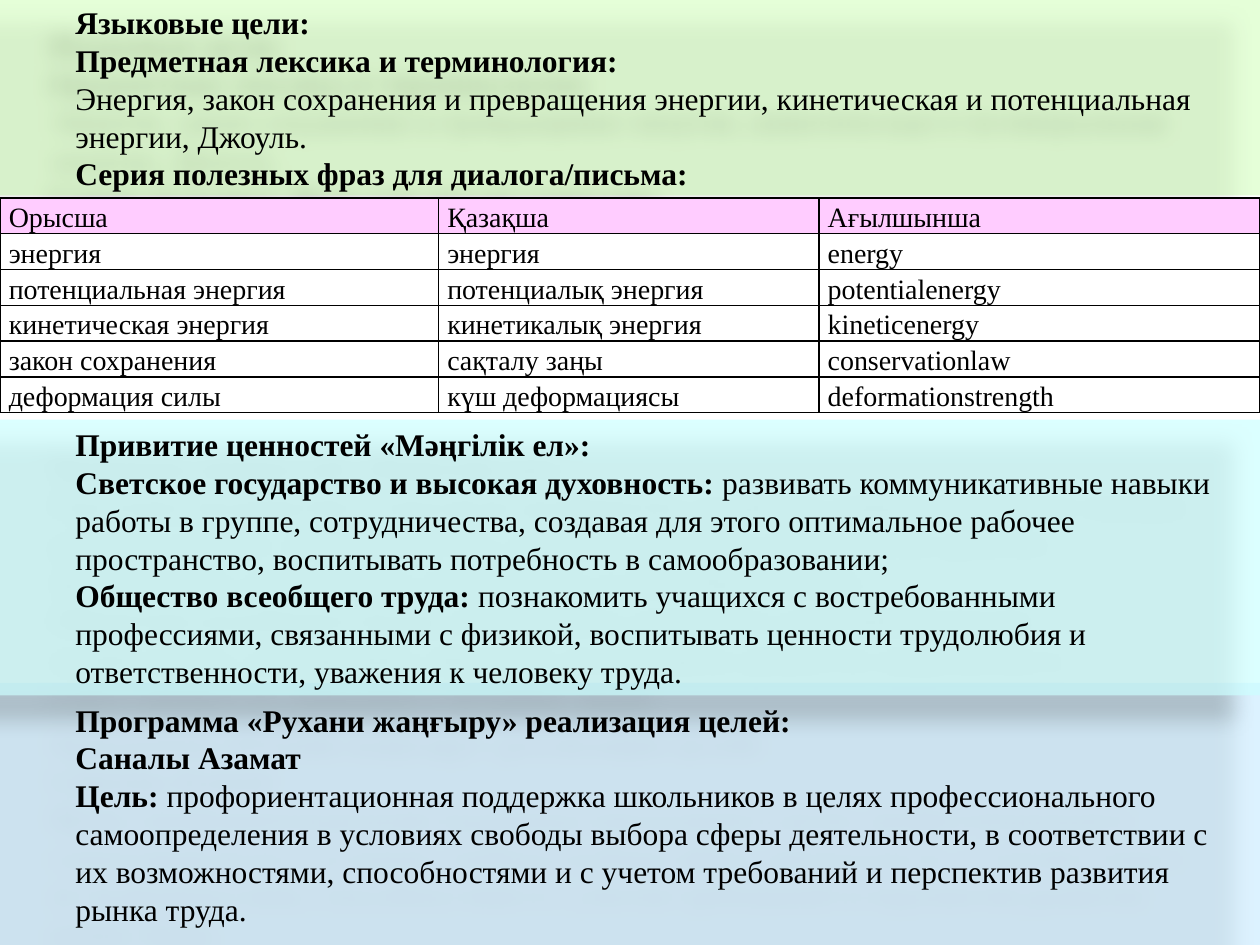
from dataclasses import dataclass

from lxml import etree
from pptx import Presentation
from pptx.dml.color import RGBColor
from pptx.enum.shapes import MSO_SHAPE
from pptx.enum.text import MSO_ANCHOR, PP_ALIGN
from pptx.oxml.ns import qn
from pptx.util import Inches, Pt

RECTANGLE = MSO_SHAPE.RECTANGLE
MIDDLE = MSO_ANCHOR.MIDDLE
LEFT = PP_ALIGN.LEFT
BLANK_LAYOUT = 6

FONT = "Times New Roman"
BLACK = "000000"
HEADER_PINK = "FFCCFF"
BODY_SIZE = 18
TABLE_SIZE = 16
ROW_HEIGHT = 0.28
COLUMN_WIDTHS = (3.48, 3.02, 3.5)
CELL_MARGINS = {
    "margin_left": Inches(0.07),
    "margin_right": Inches(0.07),
    "margin_top": 0,
    "margin_bottom": 0,
}
SHADOW = {"blurRad": Pt(11.8), "dist": Pt(19.7), "dir": 141 * 60000,
          "algn": "ctr", "rotWithShape": 0}


@dataclass
class Line:
    """A bold lead and the regular text after it; broken lines share a paragraph."""
    lead: str
    text: str = ""
    break_before: bool = False
    break_after_lead: bool = False


@dataclass
class Panel:
    top: float
    height: float
    color: str
    opacity: int
    lines: list[Line]


PROGRAM = Panel(5.42, 2.08, "CCECFF", 67, [
    Line("Программа «Рухани жаңғыру» реализация целей:"),
    Line("Саналы Азамат"),
    Line("Цель: ",
         "профориентационная поддержка школьников в целях профессионального "
         "самоопределения в условиях свободы выбора сферы деятельности, в "
         "соответствии с их возможностями, способностями и с учетом требований "
         "и перспектив развития рынка труда.", break_before=True),
])
LANGUAGE_GOALS = Panel(0, 1.55, "99FF66", 25, [
    Line("Языковые цели:"),
    Line("Предметная лексика и терминология:",
         "Энергия, закон сохранения и превращения энергии, кинетическая и "
         "потенциальная энергии, Джоуль.", break_after_lead=True),
    Line("Серия полезных фраз для диалога/письма:"),
])
VALUES = Panel(3.33, 2.19, "CCFFFF", 69, [
    Line("Привитие ценностей «Мәңгілік ел»:"),
    Line("Светское государство и высокая духовность: ",
         "развивать коммуникативные навыки работы в группе, сотрудничества, "
         "создавая для этого оптимальное рабочее пространство, воспитывать "
         "потребность в самообразовании;"),
    Line("Общество всеобщего труда: ",
         "познакомить учащихся с востребованными профессиями, связанными с "
         "физикой, воспитывать ценности трудолюбия и ответственности, уважения "
         "к человеку труда.", break_before=True),
])
VOCABULARY = [
    ("Орысша", "Қазақша", "Ағылшынша"),
    ("энергия", "энергия", "energy"),
    ("потенциальная энергия", "потенциалық энергия", "potentialenergy"),
    ("кинетическая энергия", "кинетикалық энергия", "kineticenergy"),
    ("закон сохранения", "сақталу заңы", "conservationlaw"),
    ("деформация силы", "күш деформациясы", "deformationstrength"),
]


def set_color(fill, color: str, opacity: int = 100) -> None:
    fill.solid()
    fill.fore_color.rgb = RGBColor.from_string(color)
    if opacity < 100:
        add_alpha(fill._xPr.find(f".//{qn('a:srgbClr')}"), opacity)


def add_alpha(color_element, opacity: int) -> None:
    etree.SubElement(color_element, qn("a:alpha"), val=str(opacity * 1000))


def add_run(paragraph, text: str, size: int, bold: bool = False) -> None:
    run = paragraph.add_run()
    run.text = text
    for name, value in {"name": FONT, "size": Pt(size), "bold": bold}.items():
        setattr(run.font, name, value)
    set_color(run.font.fill, BLACK)


def add_shadow(shape) -> None:
    shape.shadow.inherit = False
    effects = shape._element.spPr.find(qn("a:effectLst"))
    shadow = etree.SubElement(effects, qn("a:outerShdw"),
                              {name: str(value) for name, value in SHADOW.items()})
    add_alpha(etree.SubElement(shadow, qn("a:srgbClr"), val=BLACK), 28)


def add_panel(slide, panel: Panel) -> None:
    shape = slide.shapes.add_shape(RECTANGLE, 0, Inches(panel.top),
                                   Inches(10), Inches(panel.height))
    set_color(shape.fill, panel.color, panel.opacity)
    shape.line.fill.background()
    add_shadow(shape)
    frame = shape.text_frame
    frame.word_wrap = True
    frame.vertical_anchor = MIDDLE
    paragraph = frame.paragraphs[0]
    for index, line in enumerate(panel.lines):
        if line.break_before:
            paragraph.add_line_break()
        elif index:
            paragraph = frame.add_paragraph()
        paragraph.level = 1
        paragraph.alignment = LEFT
        properties = paragraph._p.get_or_add_pPr()
        properties.set("marL", str(Inches(0.5)))
        properties.set("indent", "0")
        add_run(paragraph, line.lead, BODY_SIZE, bold=True)
        if line.break_after_lead:
            paragraph.add_line_break()
        if line.text:
            add_run(paragraph, line.text, BODY_SIZE)


def add_borders(cell) -> None:
    properties = cell._tc.get_or_add_tcPr()
    for side in ("lnL", "lnR", "lnT", "lnB"):
        border = etree.SubElement(properties, qn(f"a:{side}"), w=str(Pt(1)))
        fill = etree.SubElement(border, qn("a:solidFill"))
        etree.SubElement(fill, qn("a:srgbClr"), val=BLACK)


def add_vocabulary(slide, rows: list[tuple[str, ...]]) -> None:
    table = slide.shapes.add_table(
        len(rows), len(COLUMN_WIDTHS), 0, Inches(1.57),
        Inches(sum(COLUMN_WIDTHS)), Inches(ROW_HEIGHT * len(rows))).table
    table.first_row = table.horz_banding = False
    for column, width in zip(table.columns, COLUMN_WIDTHS):
        column.width = Inches(width)
    for row_index, words in enumerate(rows):
        for column_index, word in enumerate(words):
            cell = table.cell(row_index, column_index)
            for name, value in CELL_MARGINS.items():
                setattr(cell, name, value)
            add_borders(cell)
            if row_index == 0:
                set_color(cell.fill, HEADER_PINK, 35)
            else:
                cell.fill.background()
            paragraph = cell.text_frame.paragraphs[0]
            paragraph.line_spacing = 1.15
            add_run(paragraph, word, TABLE_SIZE)


def main() -> None:
    presentation = Presentation()
    presentation.slide_width = Inches(10)
    presentation.slide_height = Inches(7.5)
    slide = presentation.slides.add_slide(presentation.slide_layouts[BLANK_LAYOUT])
    add_panel(slide, PROGRAM)
    add_panel(slide, LANGUAGE_GOALS)
    add_vocabulary(slide, VOCABULARY)
    add_panel(slide, VALUES)
    presentation.save("out.pptx")


if __name__ == "__main__":
    main()
